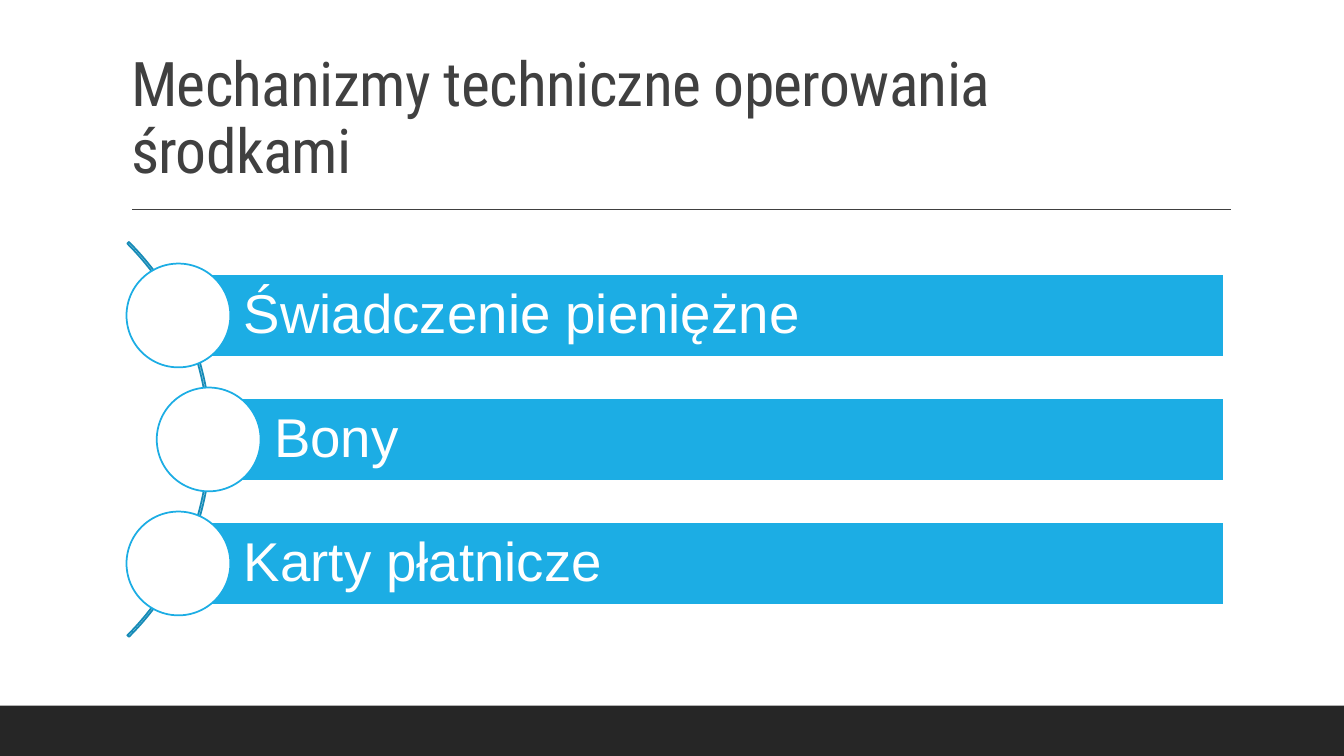
import pptx
import pptx.util
import pptx.dml.color
import pptx.enum.shapes
import pptx.enum.text
import pptx.oxml.ns
import lxml.etree
from pptx.util import Inches

SHAPE = pptx.enum.shapes.MSO_SHAPE
ANCHOR = pptx.enum.text.MSO_ANCHOR


def rgb(hex_string):
    return pptx.dml.color.RGBColor.from_string(hex_string)


class Deck:
    dark, grey, blue, deep_blue, white = "262626", "404040", "1CADE4", "168BB7", "FFFFFF"
    title_font, body_font = "Roboto Condensed", "Arial"

    def __init__(self):
        self.prs = pptx.Presentation()
        self.prs.slide_width, self.prs.slide_height = Inches(13.33), Inches(7.5)
        self.s = self.prs.slides.add_slide(self.prs.slide_layouts[5])

    def label(self, tf, text, size, font, color, anchor):
        tf.word_wrap = True
        tf.auto_size = pptx.enum.text.MSO_AUTO_SIZE.NONE
        tf.vertical_anchor = anchor
        tf.text = text
        p = tf.paragraphs[0]
        p.alignment = pptx.enum.text.PP_ALIGN.LEFT
        p.line_spacing = 0.9
        r = p.runs[0]
        r.font.size = pptx.util.Pt(size)
        r.font.name = font
        r.font.color.rgb = rgb(color)
        return r

    def title(self, text, x, y, w, h):
        sp = self.s.shapes.title
        sp.left, sp.top, sp.width, sp.height = map(Inches, (x, y, w, h))
        r = self.label(sp.text_frame, text, 44, self.title_font, self.grey, ANCHOR.BOTTOM)
        r.font._element.set("spc", "-50")

    def shape(self, kind, x, y, w, h, fill=None, line=None):
        sp = self.s.shapes.add_shape(kind, *map(Inches, (x, y, w, h)))
        sp.shadow.inherit = False
        if fill:
            sp.fill.solid()
            sp.fill.fore_color.rgb = rgb(fill)
        else:
            sp.fill.background()
        if line:
            sp.line.color.rgb = rgb(line)
            sp.line.width = pptx.util.Pt(1.25)
        else:
            sp.line.fill.background()
        return sp

    def rule(self, x1, x2, y):
        c = self.s.shapes.add_connector(
            pptx.enum.shapes.MSO_CONNECTOR.STRAIGHT, *map(Inches, (x1, y, x2, y)))
        c.line.color.rgb = rgb(self.grey)
        c.line.width = pptx.util.Pt(1)
        lxml.etree.SubElement(c._element.spPr, pptx.oxml.ns.qn("a:effectLst"))

    def arc(self, cx, cy, size):
        sp = self.shape(SHAPE.BLOCK_ARC, cx - size / 2, cy - size / 2, size, size,
                        line=self.deep_blue)
        for i, value in enumerate((189, 27, 0.004)):  # 315° to 45°, thin band
            sp.adjustments[i] = value

    def item(self, text, cx, cy, right, bar_height=0.82, diameter=1.03):
        bar = self.shape(SHAPE.RECTANGLE, cx, cy - bar_height / 2, right - cx, bar_height,
                         self.blue, self.white)
        tf = bar.text_frame
        tf.margin_left = Inches(0.65)
        tf.margin_top = tf.margin_right = tf.margin_bottom = Inches(0.11)
        self.label(tf, text, 39, self.body_font, self.white, ANCHOR.MIDDLE)
        self.shape(SHAPE.OVAL, cx - diameter / 2, cy - diameter / 2, diameter, diameter,
                   self.white, self.blue)


def main():
    deck = Deck()

    # Footer band, title and rule
    deck.shape(SHAPE.RECTANGLE, 0, 7, 13.33, 0.5, deck.dark)
    deck.rule(1.31, 12.21, 2.08)
    deck.title("Mechanizmy techniczne operowania środkami", 1.2, 0.31, 11, 1.59)

    # Curved list: items spaced evenly about the arc's middle
    middle, pitch = 4.36, 1.23
    deck.arc(-0.68, middle, 5.54)
    items = [("Świadczenie pieniężne", 1.77), ("Bony", 2.07), ("Karty płatnicze", 1.77)]
    for i, (text, cx) in enumerate(items):
        deck.item(text, cx, middle + (i - 1) * pitch, right=12.14)

    deck.prs.save("out.pptx")


if __name__ == "__main__":
    main()
